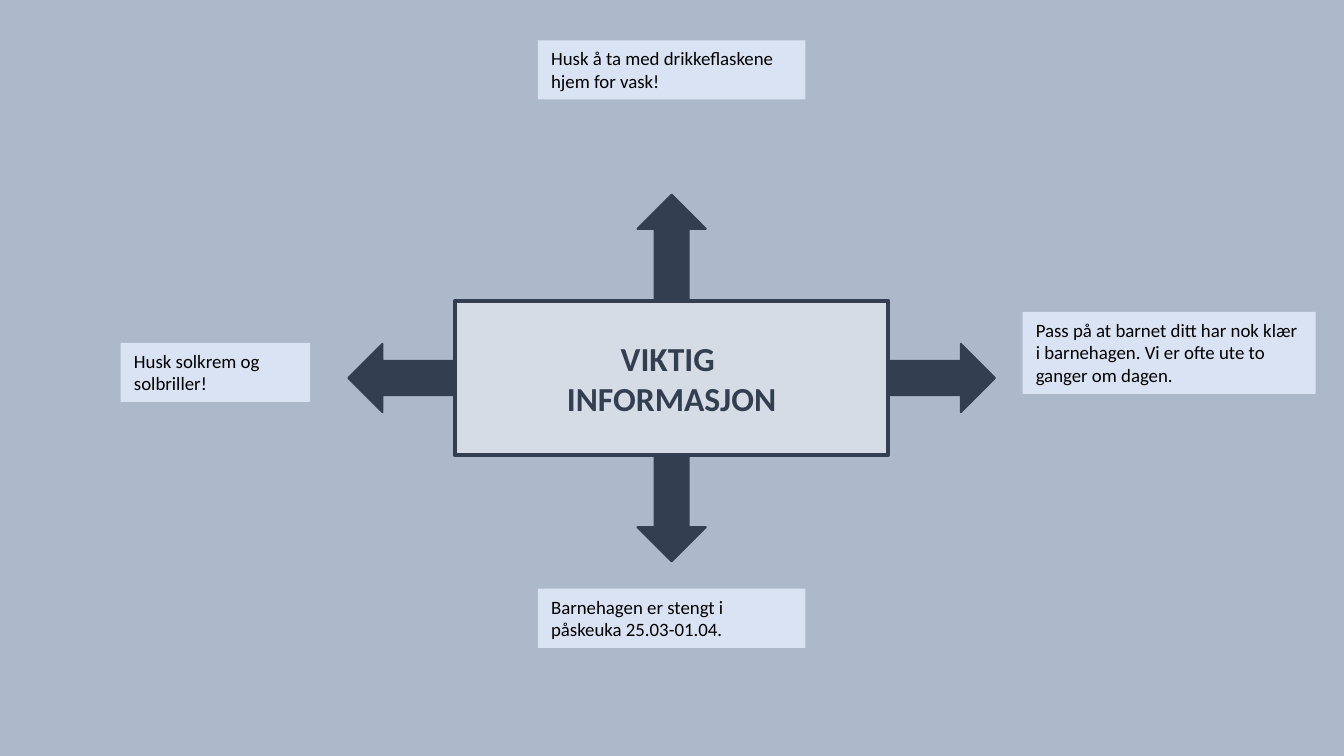
from dataclasses import dataclass

from pptx import Presentation
from pptx.dml.color import RGBColor
from pptx.enum.shapes import MSO_SHAPE
from pptx.enum.text import MSO_ANCHOR, MSO_AUTO_SIZE, PP_ALIGN
from pptx.util import Pt

RECT = MSO_SHAPE.RECTANGLE
ARROW = MSO_SHAPE.UP_ARROW
TOP = MSO_ANCHOR.TOP
MIDDLE = MSO_ANCHOR.MIDDLE
LEFT = PP_ALIGN.LEFT
CENTER = PP_ALIGN.CENTER
FIXED = MSO_AUTO_SIZE.NONE
GROW = MSO_AUTO_SIZE.SHAPE_TO_FIT_TEXT


@dataclass(frozen=True)
class Theme:
    font: str = "Calibri"
    back: str = "ADB9CA"
    dark: str = "333F50"
    panel: str = "D6DCE5"
    note: str = "DAE3F3"
    ink: str = "000000"
    head_size: float = 18
    note_size: float = 10.1


class Board:
    def __init__(self, deck, theme):
        self.theme = theme
        self.slide = deck.slides.add_slide(deck.slide_layouts[5])
        self.paint(self.slide.background.fill, theme.back)

    def paint(self, fill, color):
        fill.solid()
        fill.fore_color.rgb = RGBColor.from_string(color)

    def border(self, shape, width):
        self.paint(shape.line.fill, self.theme.dark)
        shape.line.width = Pt(width)

    def label(self, shape, lines, size, color, align, bold=False):
        frame = shape.text_frame
        for i, line in enumerate(lines):
            para = frame.add_paragraph() if i else frame.paragraphs[0]
            para.alignment = align
            run = para.add_run()
            run.text = line
            run.font.name = self.theme.font
            run.font.size = Pt(size)
            run.font.bold = bold
            run.font.color.rgb = RGBColor.from_string(color)

    def title(self, x, y, width, height, lines):
        theme = self.theme
        shape = self.slide.shapes.title
        shape.left, shape.top = Pt(x - width / 2), Pt(y - height / 2)
        shape.width, shape.height = Pt(width), Pt(height)
        self.paint(shape.fill, theme.panel)
        self.border(shape, 2.25)
        frame = shape.text_frame
        frame.word_wrap = True
        frame.auto_size = FIXED
        frame.vertical_anchor = MIDDLE
        self.label(shape, lines, theme.head_size, theme.dark, CENTER, True)

    def shape(self, kind, left, top, width, height, color):
        shape = self.slide.shapes.add_shape(
            kind, Pt(left), Pt(top), Pt(width), Pt(height))
        shape.shadow.inherit = False
        self.paint(shape.fill, color)
        return shape

    def arrow(self, x, y, angle):
        width, length = 36.7, 56.9
        shape = self.shape(ARROW, x - width / 2, y - length / 2,
                           width, length, self.theme.dark)
        shape.rotation = angle
        self.border(shape, 1)

    def note(self, left, top, width, height, text):
        theme = self.theme
        shape = self.shape(RECT, left, top, width, height, theme.note)
        shape.line.fill.background()
        frame = shape.text_frame
        frame.word_wrap = True
        frame.auto_size = GROW
        frame.vertical_anchor = TOP
        self.label(shape, [text], theme.note_size, theme.ink, LEFT)


def main():
    deck = Presentation()
    deck.slide_width, deck.slide_height = Pt(720), Pt(405)
    board = Board(deck, Theme())

    mid_x, mid_y = 359.8, 202.5
    board.title(mid_x, mid_y, 231.8, 82.8, ["VIKTIG ", "INFORMASJON"])

    reach_x, reach_y = 144.8, 69.8
    for step_x, step_y, angle in [(0, -1, 0), (1, 0, 90),
                                  (0, 1, 180), (-1, 0, 270)]:
        board.arrow(mid_x + step_x * reach_x, mid_y + step_y * reach_y, angle)

    wide, low = 143.3, 31.7
    side = mid_x - wide / 2
    notes = [
        (side, 21.6, wide, low, "Husk å ta med drikkeflaskene hjem for vask!"),
        (547.8, 167.1, 157, 43.9,
         "Pass på at barnet ditt har nok klær i barnehagen. "
         "Vi er ofte ute to ganger om dagen."),
        (side, 315.4, wide, low,
         "Barnehagen er stengt i påskeuka 25.03-01.04."),
        (64.7, 183.7, 101.5, low, "Husk solkrem og solbriller!"),
    ]
    for note in notes:
        board.note(*note)

    deck.save("out.pptx")


if __name__ == "__main__":
    main()
